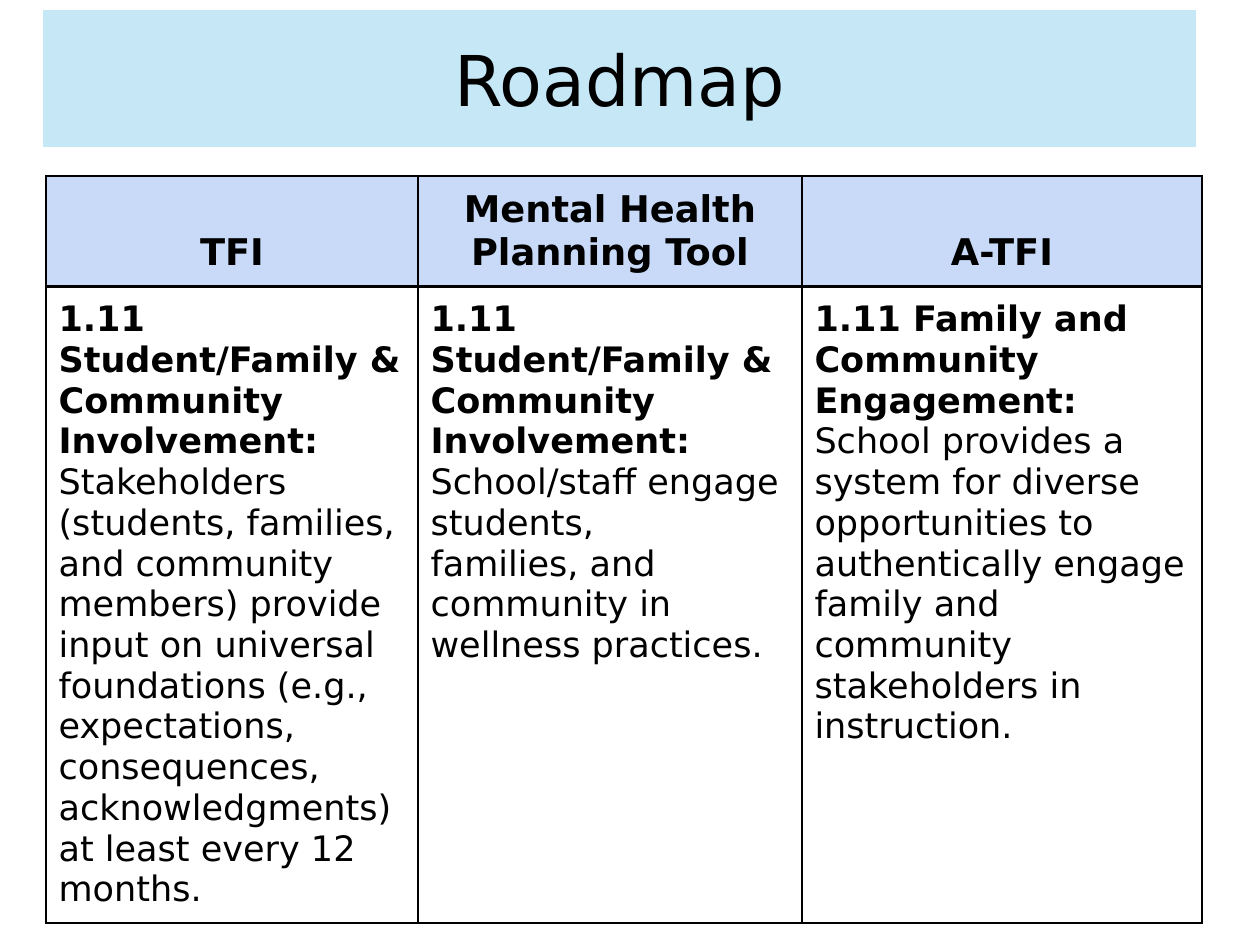
from lxml.etree import SubElement
from pptx import Presentation
from pptx.dml.color import RGBColor
from pptx.enum.text import MSO_ANCHOR, MSO_AUTO_SIZE, PP_ALIGN
from pptx.oxml import parse_xml
from pptx.oxml.ns import nsdecls, qn
from pptx.util import Pt

EMU_PER_PX = 914400 / 126
FONT = "DejaVu Sans"
COLORS = {"text": "000000", "border": "000000", "banner": "A9DCF2",
          "banner_line": "FFFFFF", "header": "C9DAF8"}
COL_WIDTHS = [372, 384, 400]
ROW_HEIGHTS = [110, 636]
HEADERS = ["TFI", "Mental Health Planning Tool", "A-TFI"]
INVOLVEMENT = "1.11 Student/Family & Community Involvement: "
ITEMS = [
    [[(INVOLVEMENT, True),
      ("Stakeholders (students, families, and community members) provide input "
       "on universal foundations (e.g., expectations, consequences, "
       "acknowledgments) at least every 12 months.", False)]],
    [[(INVOLVEMENT, True), ("School/staff engage students,", False)],
     [("families, and community in", False)],
     [("wellness practices.", False)]],
    [[("1.11 Family and Community Engagement:", True)],
     [("School provides a system for diverse opportunities to authentically "
       "engage family and community stakeholders in instruction.", False)]],
]


def px(n):
    return round(n * EMU_PER_PX)


def rgb(name):
    return RGBColor.from_string(COLORS[name])


def format_run(r, size, bold=False):
    r.font.name = FONT
    r.font.size = Pt(size)
    r.font.bold = bold
    r.font.color.rgb = rgb("text")


def add_title(s, text):
    sp = s.shapes.title
    sp.left, sp.top, sp.width, sp.height = px(42), px(9), px(1155), px(139)
    sp.fill.solid()
    sp.fill.fore_color.rgb = rgb("banner")
    color = sp.fill._xPr.find(qn("a:solidFill"))[0]
    SubElement(color, qn("a:alpha"), val="67000")
    sp.line.color.rgb = rgb("banner_line")
    sp.line.width = Pt(0.75)
    tf = sp.text_frame
    tf.text = text
    tf.auto_size = MSO_AUTO_SIZE.NONE
    tf.vertical_anchor = MSO_ANCHOR.MIDDLE
    p = tf.paragraphs[0]
    p.alignment = PP_ALIGN.CENTER
    format_run(p.runs[0], 40)


def set_borders(cell):
    tcPr = cell._tc.get_or_add_tcPr()
    for i, side in enumerate("LRTB"):
        tcPr.insert(i, parse_xml(
            f'<a:ln{side} {nsdecls("a")} w="{Pt(1.5)}"><a:solidFill>'
            f'<a:srgbClr val="{COLORS["border"]}"/></a:solidFill></a:ln{side}>'))


def fill_cell(cell, paragraphs, size, align, anchor, fill=None):
    cell.margin_left = cell.margin_right = Pt(7.2)
    cell.margin_top = cell.margin_bottom = Pt(7.2)
    cell.vertical_anchor = anchor
    if fill:
        cell.fill.solid()
        cell.fill.fore_color.rgb = rgb(fill)
    else:
        cell.fill.background()
    set_borders(cell)
    tf = cell.text_frame
    for i, runs in enumerate(paragraphs):
        p = tf.add_paragraph() if i else tf.paragraphs[0]
        p.alignment = align
        for text, bold in runs:
            r = p.add_run()
            r.text = text
            format_run(r, size, bold)


def add_roadmap_table(s):
    frame = s.shapes.add_table(len(ROW_HEIGHTS), len(COL_WIDTHS), px(46), px(176),
                               px(sum(COL_WIDTHS)), px(sum(ROW_HEIGHTS)))
    table = frame.table
    table.first_row = table.horz_banding = False
    for row, height in zip(table.rows, ROW_HEIGHTS):
        row.height = px(height)
    for i, width in enumerate(COL_WIDTHS):
        table.columns[i].width = px(width)
        fill_cell(table.cell(0, i), [[(HEADERS[i], True)]], 21,
                  PP_ALIGN.CENTER, MSO_ANCHOR.BOTTOM, "header")
        fill_cell(table.cell(1, i), ITEMS[i], 20, PP_ALIGN.LEFT, MSO_ANCHOR.TOP)


def main():
    prs = Presentation()
    prs.slide_width, prs.slide_height = px(1260), px(945)
    s = prs.slides.add_slide(prs.slide_layouts[5])
    add_title(s, "Roadmap")
    add_roadmap_table(s)
    prs.save("out.pptx")


if __name__ == "__main__":
    main()
